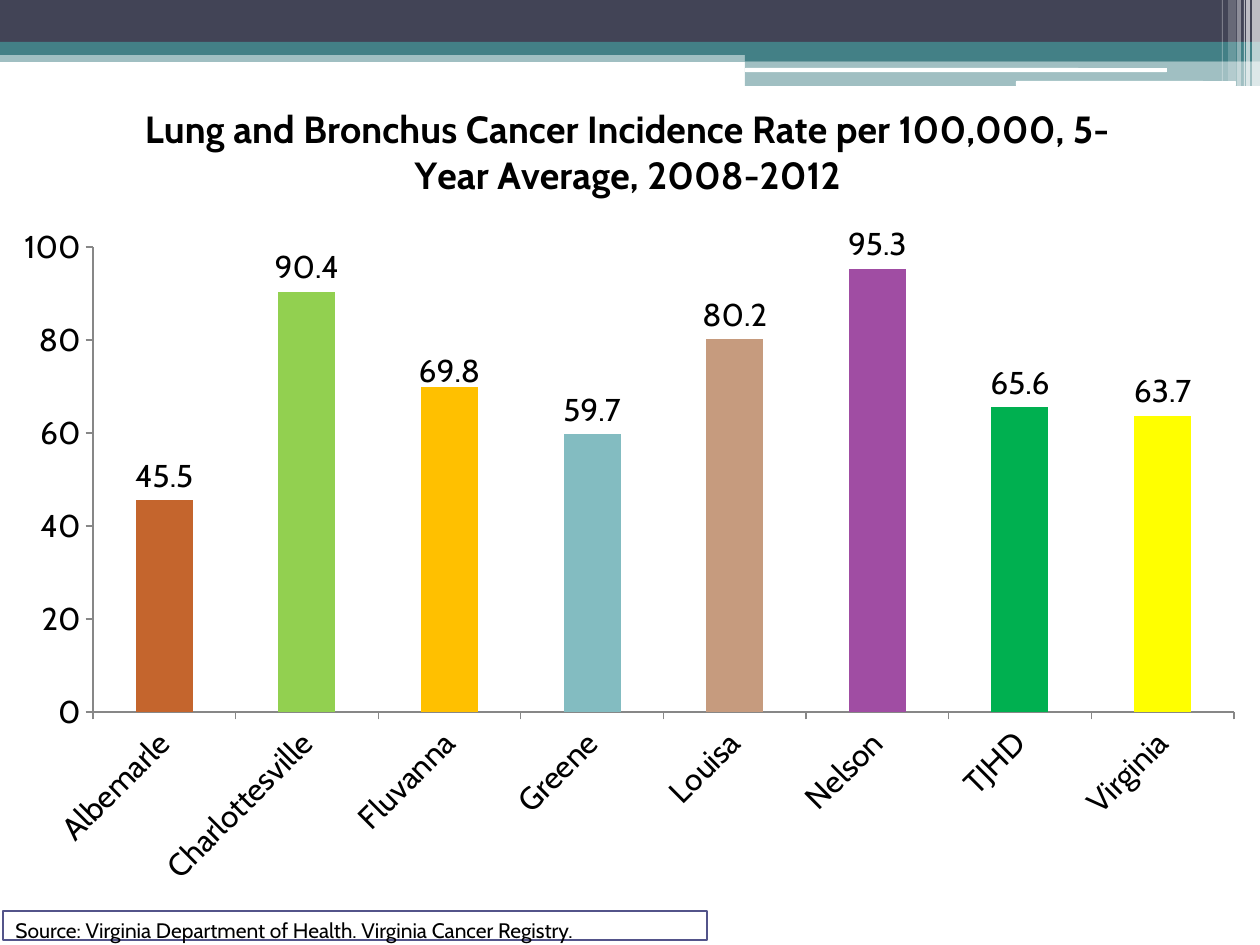
from lxml import etree
from pptx import Presentation
from pptx.chart.data import CategoryChartData
from pptx.dml.color import RGBColor
from pptx.enum.chart import XL_CHART_TYPE as ChartType
from pptx.enum.chart import XL_LABEL_POSITION as LabelPosition
from pptx.enum.chart import XL_TICK_MARK as TickMark
from pptx.enum.shapes import MSO_SHAPE as Shape
from pptx.enum.text import MSO_ANCHOR as Anchor
from pptx.enum.text import PP_ALIGN as Align
from pptx.oxml.ns import qn
from pptx.util import Pt

EMU_PER_PX = 914400 / 126
FONT = "Cabin"
BLACK, WHITE, GRAY = "000000", "FFFFFF", "878787"
TEAL, SLATE, INDIGO = "438086", "424456", "53548A"

# Left, top, width, height, colour, opacity in percent
BANDS = [
    (0, 50, 1260, 12, TEAL, 50),
    (0, 0, 1260, 42, SLATE, 100),
    (0, 42, 1260, 13, TEAL, 100),
    (745, 49, 515, 12, TEAL, 100),
    (745, 61, 515, 25, TEAL, 50),
]
WHITE_BARS = [(745, 68, 422, 4), (1016, 81, 220, 5)]
# Left, width, height, opacity of the stripes in the corner
STRIPES = [
    (1252, 8, 86, 65), (1246, 4, 86, 65), (1244, 1, 86, 60),
    (1237, 4, 86, 40), (1228, 8, 81, 20), (1222, 1, 81, 30),
]

CHART_BOX = (0, 84, 1260, 818)
PLOT_BOX = (93, 247, 1141, 465)
TITLE_CORNER = (138, 95)
CHART_TITLE = ("Lung and Bronchus Cancer Incidence Rate per 100,000, "
               "5-Year Average, 2008-2012")
# Locality, incidence rate, column colour
RATES = [
    ("Albemarle", 45.5, "C4652D"),
    ("Charlottesville", 90.4, "92D050"),
    ("Fluvanna", 69.8, "FFC000"),
    ("Greene", 59.7, "83BCC1"),
    ("Louisa", 80.2, "C69B7E"),
    ("Nelson", 95.3, "A04DA3"),
    ("TJHD", 65.6, "00B050"),
    ("Virginia", 63.7, "FFFF00"),
]
FLUVANNA = 2
SOURCE = "Source: Virginia Department of Health. Virginia Cancer Registry."


def px(*lengths):
    return [round(length * EMU_PER_PX) for length in lengths]


def rgb(color):
    return RGBColor.from_string(color)


def set_fill(fill, color, opacity=100):
    fill.solid()
    fill.fore_color.rgb = rgb(color)
    if opacity < 100:
        color_xml = fill._xPr.find(qn("a:solidFill"))[0]
        etree.SubElement(color_xml, qn("a:alpha"), val=str(opacity * 1000))


def set_font(font, size, bold=False):
    font.name = FONT
    font.size = Pt(size)
    font.bold = bold
    font.color.rgb = rgb(BLACK)


def add_block(slide, box, color, opacity=100, kind=Shape.RECTANGLE):
    block = slide.shapes.add_shape(kind, *px(*box))
    block.shadow.inherit = False
    set_fill(block.fill, color, opacity)
    block.line.fill.background()
    return block


def add_header(slide):
    for *box, color, opacity in BANDS:
        add_block(slide, box, color, opacity)
    for box in WHITE_BARS:
        add_block(slide, box, WHITE, kind=Shape.ROUNDED_RECTANGLE)
    for left, width, height, opacity in STRIPES:
        add_block(slide, (left, 0, width, height), WHITE, opacity)


def add_source(slide):
    source = add_block(slide, (3, 911, 704, 29), WHITE)
    source.line.color.rgb = rgb(INDIGO)
    source.line.width = Pt(0.75)
    frame = source.text_frame
    frame.text = SOURCE
    frame.word_wrap = True
    frame.vertical_anchor = Anchor.TOP
    frame.paragraphs[0].alignment = Align.LEFT
    set_font(frame.paragraphs[0].runs[0].font, 12)


def set_layout(parent, index, **settings):
    for old_layout in parent.findall(qn("c:layout")):
        parent.remove(old_layout)
    layout = etree.Element(qn("c:layout"))
    manual = etree.SubElement(layout, qn("c:manualLayout"))
    for tag, value in settings.items():
        etree.SubElement(manual, qn(f"c:{tag}"), val=str(value))
    parent.insert(index, layout)


def chart_share(left, top):
    """Turn a slide position into fractions of the chart's box."""
    chart_left, chart_top, chart_width, chart_height = CHART_BOX
    return {"xMode": "edge", "yMode": "edge",
            "x": round((left - chart_left) / chart_width, 4),
            "y": round((top - chart_top) / chart_height, 4)}


def place_parts(chart):
    left, top, width, height = PLOT_BOX
    _, _, chart_width, chart_height = CHART_BOX
    set_layout(chart._chartSpace.chart.plotArea, 0, layoutTarget="inner",
               **chart_share(left, top),
               w=round(width / chart_width, 4),
               h=round(height / chart_height, 4))
    set_layout(chart.chart_title._element, 1, **chart_share(*TITLE_CORNER))


def format_axes(chart):
    for axis in (chart.category_axis, chart.value_axis):
        axis.has_major_gridlines = False
        axis.major_tick_mark = TickMark.OUTSIDE
        axis.minor_tick_mark = TickMark.NONE
        axis.format.line.color.rgb = rgb(GRAY)
        axis.format.line.width = Pt(0.75)
        set_font(axis.tick_labels.font, 18)
    body = chart.category_axis._element.find(qn("c:txPr")).find(qn("a:bodyPr"))
    body.set("rot", str(-45 * 60000))
    body.set("vert", "horz")
    rate_axis = chart.value_axis
    rate_axis.minimum_scale = 0
    rate_axis.maximum_scale = 100
    rate_axis.major_unit = 20
    rate_axis.tick_labels.number_format = "0"
    rate_axis.tick_labels.number_format_is_linked = False


def format_columns(plot):
    plot.gap_width = 150
    plot.vary_by_categories = False
    series = plot.series[0]
    set_fill(series.format.fill, INDIGO)
    for index, (_, _, color) in enumerate(RATES):
        set_fill(series.points[index].format.fill, color)

    labels = series.data_labels
    labels.show_value = True
    labels.number_format = "#,##0.0"
    labels.number_format_is_linked = False
    # The Fluvanna label sits slightly nearer to its column
    near_label = series.points[FLUVANNA].data_label
    for label in (labels, near_label):
        label.position = LabelPosition.OUTSIDE_END
        set_font(label.font, 18)
    set_layout(labels._element.find(qn("c:dLbl")), 1, x=0, y=0.01)


def add_rate_chart(slide):
    data = CategoryChartData(number_format="0.0")
    data.categories = [locality for locality, _, _ in RATES]
    data.add_series("Series 1", [rate for _, rate, _ in RATES])
    chart = slide.shapes.add_chart(
        ChartType.COLUMN_CLUSTERED, *px(*CHART_BOX), data).chart
    set_font(chart.font, 18)
    chart.has_legend = False
    chart.has_title = True
    title = chart.chart_title
    title.include_in_layout = False
    title.text_frame.text = CHART_TITLE
    set_font(title.text_frame.paragraphs[0].runs[0].font, 21.6, bold=True)
    place_parts(chart)
    format_axes(chart)
    format_columns(chart.plots[0])


def main():
    deck = Presentation()
    deck.slide_width, deck.slide_height = px(1260, 945)
    slide = deck.slides.add_slide(deck.slide_layouts[6])
    add_header(slide)
    add_source(slide)
    add_rate_chart(slide)
    deck.save("out.pptx")


if __name__ == "__main__":
    main()
